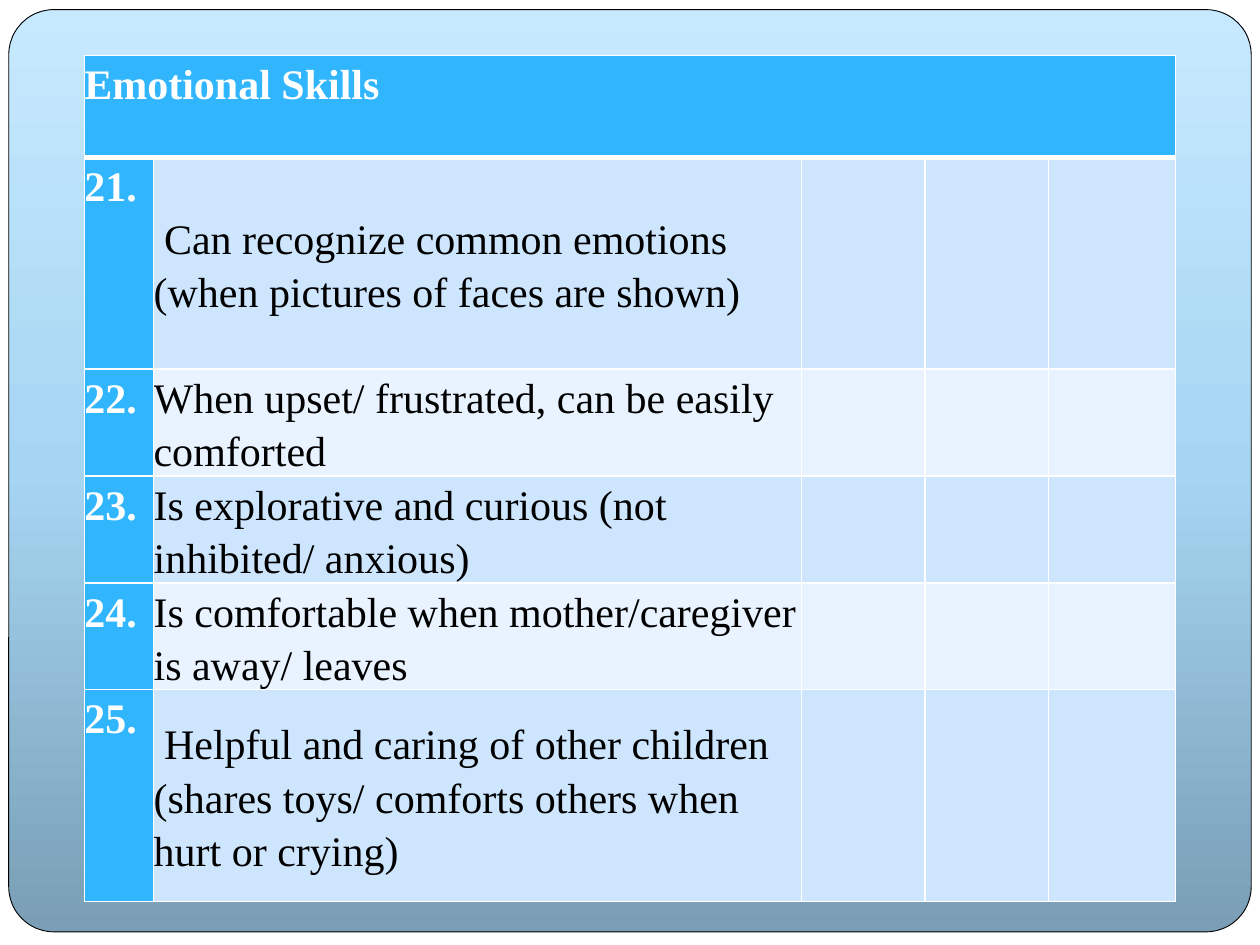
from copy import deepcopy

from pptx import Presentation
from pptx import util as u
from pptx.dml.color import RGBColor
from pptx.enum import shapes, text
from pptx.oxml import parse_xml
from pptx.oxml.ns import nsdecls, qn

COLORS = {
    "white": "FFFFFF",
    "black": "000000",
    "header": "31B6FD",
    "odd_band": "CEE5FE",
    "even_band": "E8F3FF",
    "gradient_bottom": "799EB5",
    "gradient_middle": "A6D5F2",
    "gradient_top": "C7E9FF",
}
COLUMN_WIDTHS = [39.6, 370.1, 70.6, 70.6, 72.6]
HEADER_HEIGHT, SHORT_ROW, TALL_ROW = 58.3, 58.3, 121
FIRST_NUMBER = 21
SKILLS = [
    (" Can recognize common emotions (when pictures of faces are shown)", TALL_ROW),
    ("When upset/ frustrated, can be easily comforted", SHORT_ROW),
    ("Is explorative and curious (not inhibited/ anxious)", SHORT_ROW),
    ("Is comfortable when mother/caregiver is away/ leaves", SHORT_ROW),
    (" Helpful and caring of other children (shares toys/ comforts others when hurt or crying)", TALL_ROW),
]


def color(name):
    return RGBColor.from_string(COLORS[name])


class SlideBuilder:
    font = "Times New Roman"
    font_size = 24
    line_spacing = 1.15

    def __init__(self, slide):
        self.slide = slide

    def background(self, fill):
        self.slide.background.fill.solid()
        self.slide.background.fill.fore_color.rgb = color(fill)

    def gradient_panel(self, left, top, width, height, corner, stops):
        """Draw a rounded panel whose (position, colour) stops run from bottom to top."""
        panel = self.slide.shapes.add_shape(
            shapes.MSO_SHAPE.ROUNDED_RECTANGLE,
            u.Pt(left), u.Pt(top), u.Pt(width), u.Pt(height))
        panel.adjustments[0] = corner
        panel.shadow.inherit = False
        panel.line.color.rgb = color("black")
        panel.line.width = u.Pt(0.5)
        panel.fill.gradient()
        panel.fill.gradient_angle = 90
        stop_list = panel._element.spPr.find(qn("a:gradFill")).find(qn("a:gsLst"))
        while len(stop_list) < len(stops):
            stop_list.append(deepcopy(stop_list[0]))
        for stop, (position, name) in zip(panel.fill.gradient_stops, stops):
            stop.position = position
            stop.color.rgb = color(name)

    def table(self, left, top, column_widths, row_heights):
        table = self.slide.shapes.add_table(
            len(row_heights), len(column_widths), u.Pt(left), u.Pt(top),
            u.Pt(sum(column_widths)), u.Pt(sum(row_heights))).table
        for column, width in zip(table.columns, column_widths):
            column.width = u.Pt(width)
        for row, height in zip(table.rows, row_heights):
            row.height = u.Pt(height)
        return table

    def cell(self, cell, fill, top_border=1, bottom_border=1):
        cell.fill.solid()
        cell.fill.fore_color.rgb = color(fill)
        borders = {"L": 1, "R": 1, "T": top_border, "B": bottom_border}
        for index, (side, width) in enumerate(borders.items()):
            border = parse_xml(
                f'<a:ln{side} {nsdecls("a")} w="{u.Pt(width)}"><a:solidFill>'
                f'<a:srgbClr val="{COLORS["white"]}"/></a:solidFill></a:ln{side}>')
            cell._tc.get_or_add_tcPr().insert(index, border)

    def cell_text(self, cell, wording, font_color, bold=False,
                  anchor=text.MSO_ANCHOR.TOP):
        cell.margin_left = cell.margin_right = 0
        cell.margin_top = cell.margin_bottom = 0
        cell.vertical_anchor = anchor
        cell.text_frame.text = wording
        paragraph = cell.text_frame.paragraphs[0]
        paragraph.line_spacing = self.line_spacing
        font = paragraph.runs[0].font
        font.name = self.font
        font.size = u.Pt(self.font_size)
        font.bold = bold
        font.color.rgb = color(font_color)


def add_skills_table(builder):
    heights = [HEADER_HEIGHT] + [height for _, height in SKILLS]
    table = builder.table(48.2, 31.7, COLUMN_WIDTHS, heights)
    last_column = len(COLUMN_WIDTHS) - 1
    table.cell(0, 0).merge(table.cell(0, last_column))
    for column in range(last_column + 1):
        builder.cell(table.cell(0, column), "header", bottom_border=3)
    builder.cell_text(table.cell(0, 0), "Emotional Skills", "white", bold=True)

    for row, (skill, _) in enumerate(SKILLS, start=1):
        band = "odd_band" if row % 2 else "even_band"
        for column in range(last_column + 1):
            builder.cell(table.cell(row, column), band if column else "header",
                         top_border=3 if row == 1 else 1)
        number = f"{FIRST_NUMBER + row - 1}."
        builder.cell_text(table.cell(row, 0), number, "white", bold=True)
        builder.cell_text(table.cell(row, 1), skill, "black",
                          anchor=text.MSO_ANCHOR.MIDDLE)


def main():
    presentation = Presentation()
    presentation.slide_width = u.Pt(720)
    presentation.slide_height = u.Pt(540)
    blank_layout = presentation.slide_layouts[6]
    builder = SlideBuilder(presentation.slides.add_slide(blank_layout))
    builder.background("white")
    builder.gradient_panel(
        5, 5.5, 710, 527, 0.049,
        [(0, "gradient_bottom"), (0.5, "gradient_middle"), (1, "gradient_top")])
    add_skills_table(builder)
    presentation.save("out.pptx")


if __name__ == "__main__":
    main()
